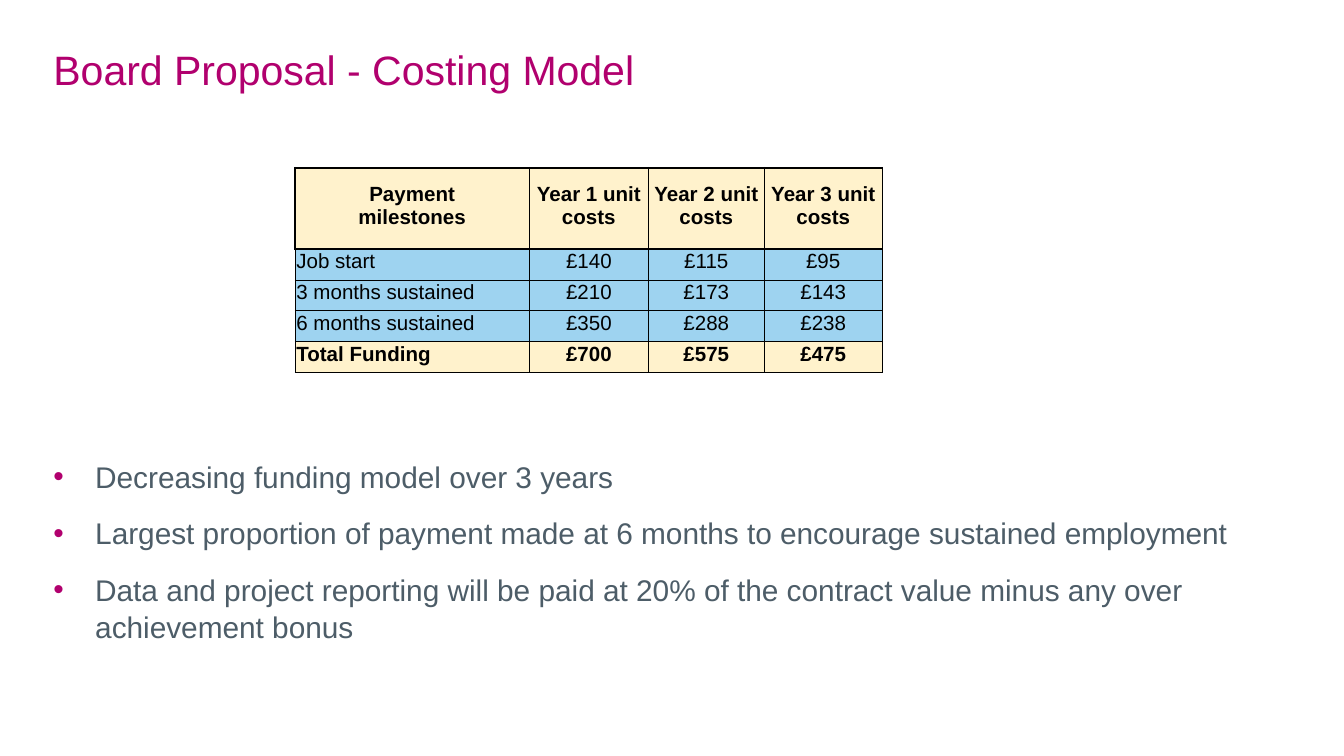
from dataclasses import dataclass

from lxml import etree
from pptx import Presentation
from pptx.dml.color import RGBColor
from pptx.enum.text import MSO_ANCHOR, MSO_AUTO_SIZE, PP_ALIGN
from pptx.oxml.ns import qn
from pptx.util import Cm, Pt

LEFT, CENTER = PP_ALIGN.LEFT, PP_ALIGN.CENTER
MIDDLE, BOTTOM, TOP = MSO_ANCHOR.MIDDLE, MSO_ANCHOR.BOTTOM, MSO_ANCHOR.TOP
NO_AUTOFIT = MSO_AUTO_SIZE.NONE

MAGENTA = RGBColor(0xB1, 0x00, 0x6E)
SLATE = RGBColor(0x4D, 0x5D, 0x68)
BLACK = RGBColor(0x00, 0x00, 0x00)
CREAM = RGBColor(0xFF, 0xF2, 0xCC)
SKY = RGBColor(0x9E, 0xD3, 0xF0)
FONT = "Arial"
THIN, THICK = Pt(0.5), Pt(1)
BULLET_INDENT = Cm(0.79)


@dataclass(frozen=True)
class CostRow:
    texts: tuple[str, ...]
    fill: RGBColor
    bold: bool = False
    header: bool = False


COST_ROWS = (
    CostRow(("Payment\nmilestones", "Year 1 unit costs", "Year 2 unit costs",
             "Year 3 unit costs"), CREAM, bold=True, header=True),
    CostRow(("Job start", "£140", "£115", "£95"), SKY),
    CostRow(("3 months sustained", "£210", "£173", "£143"), SKY),
    CostRow(("6 months sustained", "£350", "£288", "£238"), SKY),
    CostRow(("Total Funding", "£700", "£575", "£475"), CREAM, bold=True),
)
COLUMN_WIDTHS = (Cm(4.42), Cm(2.26), Cm(2.18), Cm(2.24))
HEADER_HEIGHT, ROW_HEIGHT = Cm(1.54), Cm(0.57)

BULLETS = (
    "Decreasing funding model over 3 years",
    "Largest proportion of payment made at 6 months to encourage sustained employment",
    "Data and project reporting will be paid at 20% of the contract value minus any "
    "over achievement bonus",
)


def add_run(paragraph, text: str, size: float, color: RGBColor, bold: bool = False) -> None:
    run = paragraph.add_run()
    run.text = text
    run.font.name = FONT
    run.font.size = Pt(size)
    run.font.bold = bold
    run.font.color.rgb = color


def format_frame(text_frame, anchor) -> None:
    text_frame.word_wrap = True
    text_frame.auto_size = NO_AUTOFIT
    text_frame.vertical_anchor = anchor
    text_frame.margin_left = text_frame.margin_right = Cm(0.25)
    text_frame.margin_top = text_frame.margin_bottom = Cm(0.13)


def add_title(slide, text: str) -> None:
    title = slide.shapes.title
    title.left, title.top, title.width, title.height = Cm(0.76), Cm(0.84), Cm(23.55), Cm(1.04)
    format_frame(title.text_frame, MIDDLE)
    paragraph = title.text_frame.paragraphs[0]
    paragraph.alignment = LEFT
    paragraph.line_spacing = 0.9
    add_run(paragraph, text, 22, MAGENTA)


def set_borders(cell, widths: dict[str, int]) -> None:
    properties = cell._tc.get_or_add_tcPr()
    for index, (side, width) in enumerate(widths.items()):
        line = etree.Element(qn(f"a:{side}"), w=str(width))
        fill = etree.SubElement(line, qn("a:solidFill"))
        etree.SubElement(fill, qn("a:srgbClr"), val=str(BLACK))
        properties.insert(index, line)


def fill_cell(cell, row: CostRow, text: str, centered: bool) -> None:
    cell.fill.solid()
    cell.fill.fore_color.rgb = row.fill
    cell.vertical_anchor = MIDDLE if row.header else BOTTOM
    cell.margin_left = cell.margin_right = cell.margin_top = Cm(0.02)
    cell.margin_bottom = Cm(0.13)
    paragraph = cell.text_frame.paragraphs[0]
    paragraph.alignment = CENTER if centered else LEFT
    for index, line in enumerate(text.split("\n")):
        if index:
            paragraph.add_line_break()
        add_run(paragraph, line, 11, BLACK, row.bold)


def add_cost_table(slide) -> None:
    height = HEADER_HEIGHT + ROW_HEIGHT * (len(COST_ROWS) - 1)
    table = slide.shapes.add_table(len(COST_ROWS), len(COLUMN_WIDTHS), Cm(5.58), Cm(3.17),
                                   sum(COLUMN_WIDTHS), height).table
    for column, width in zip(table.columns, COLUMN_WIDTHS):
        column.width = width
    last_column = len(COLUMN_WIDTHS) - 1
    for row_index, row in enumerate(COST_ROWS):
        table.rows[row_index].height = HEADER_HEIGHT if row.header else ROW_HEIGHT
        for column_index, text in enumerate(row.texts):
            cell = table.cell(row_index, column_index)
            fill_cell(cell, row, text, row.header or column_index > 0)
            set_borders(cell, {
                "lnL": THICK if row.header and column_index == 0 else THIN,
                "lnR": THICK if row.header and column_index == last_column else THIN,
                "lnT": THICK if row_index <= 1 else THIN,
                "lnB": THICK if row.header else THIN,
            })


def add_bullet(paragraph) -> None:
    properties = paragraph._p.get_or_add_pPr()
    properties.set("marL", str(BULLET_INDENT))
    properties.set("indent", str(-BULLET_INDENT))
    color = etree.SubElement(properties, qn("a:buClr"))
    etree.SubElement(color, qn("a:srgbClr"), val=str(MAGENTA))
    etree.SubElement(properties, qn("a:buFont"), typeface=FONT)
    etree.SubElement(properties, qn("a:buChar"), char="•")


def add_bullets(slide) -> None:
    text_frame = slide.shapes.add_textbox(Cm(0.76), Cm(8.51), Cm(23.55), Cm(5.56)).text_frame
    format_frame(text_frame, TOP)
    for index, text in enumerate(BULLETS):
        paragraph = text_frame.add_paragraph() if index else text_frame.paragraphs[0]
        add_bullet(paragraph)
        paragraph.line_spacing = 1.05
        if index:
            paragraph.space_before = Pt(10)
        add_run(paragraph, text, 16, SLATE)


def main() -> None:
    presentation = Presentation()
    presentation.slide_width, presentation.slide_height = Cm(25.4), Cm(14.29)
    slide = presentation.slides.add_slide(presentation.slide_layouts[5])
    add_title(slide, "Board Proposal - Costing Model")
    add_cost_table(slide)
    add_bullets(slide)
    presentation.save("out.pptx")


if __name__ == "__main__":
    main()
